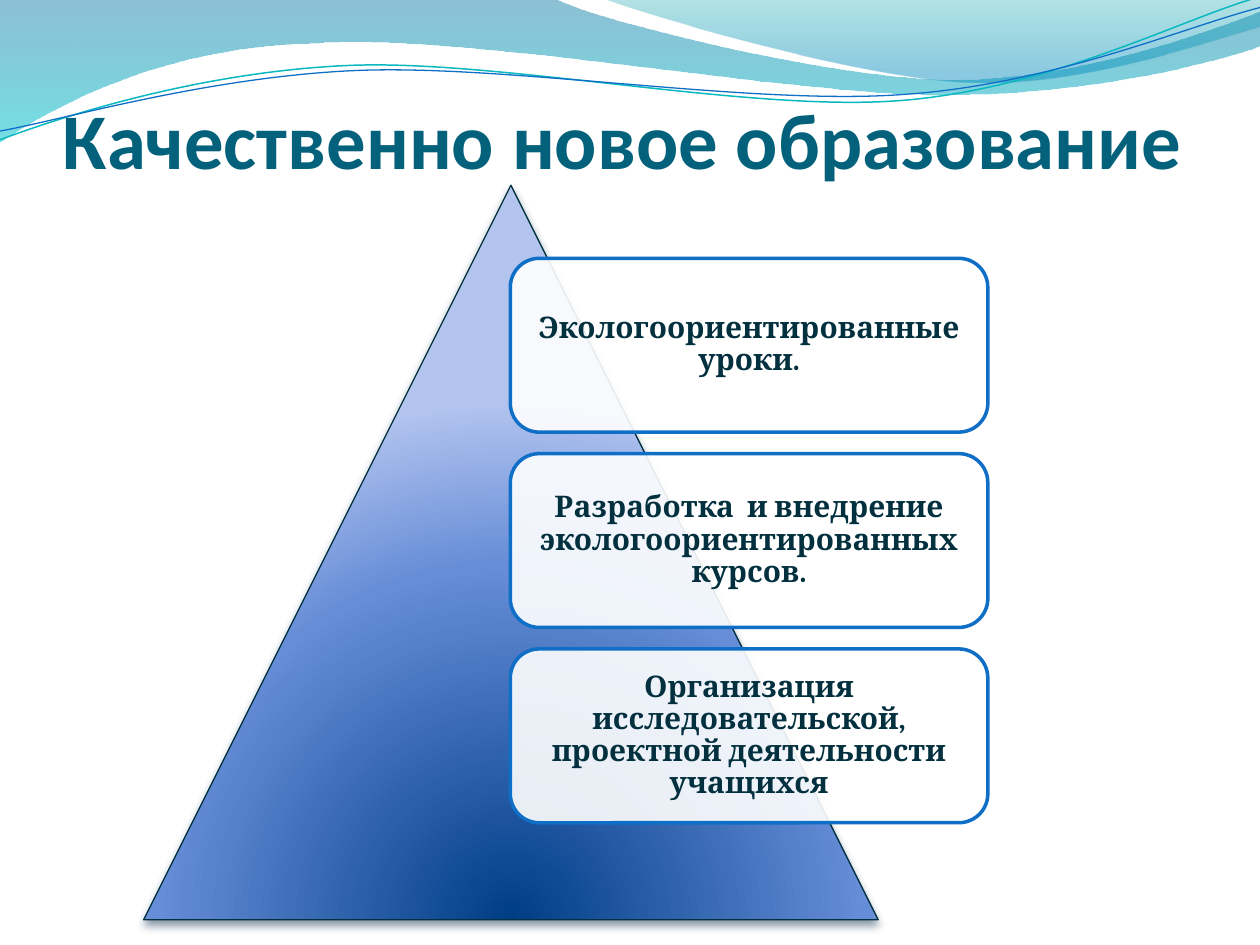
from lxml import etree
from pptx import Presentation
from pptx.dml.color import RGBColor
from pptx.enum import shapes, text
from pptx.oxml import parse_xml
from pptx.oxml.ns import nsdecls, qn
from pptx.util import Inches, Pt

COLORS = {
    "title": "04617B", "text": "02303E", "text_edge": "083763",
    "card": "FFFFFF", "card_edge": "0F6FC6", "shadow": "042747",
    "teal_line": "0AB8BF", "blue_line": "0F6FC6",
}
TITLE = "Качественно новое образование"
CARDS = [
    "Экологоориентированные уроки.",
    "Разработка  и внедрение экологоориентированных курсов.",
    "Организация исследовательской, проектной деятельности учащихся",
]
CARD_LEFT, CARD_TOP, CARD_W, CARD_H, CARD_GAP = 4.05, 2.05, 3.79, 1.38, 0.17
UNITS = 1000  # outline units per inch

DOWN = '<a:lin ang="5400000" scaled="1"/>'
FROM_BASE = ('<a:path path="circle"><a:fillToRect l="50000" t="130000" '
             'r="50000" b="-30000"/></a:path>')
# Gradient stops: position %, colour, opacity %
PYRAMID_STOPS = [(0, "003D87", 100), (68, "668DD7", 100), (100, "B3C4EF", 100)]

# Outlines start at a point; each step is a line (2 numbers) or a curve (6)
WAVES = [
    ([(0, "0074A1", 45), (100, "00C6CF", 55)],
     [(0, 0), (4.4, -0.01), (4.76, 0.17, 6.64, 0.63, 7.58, 0.63),
      (8.53, 0.63, 9.58, 0.26, 10, 0.09), (10.01, 0.36),
      (9.83, 0.44, 8.7, 0.76, 7.46, 0.75), (6.22, 0.75, 3.82, 0.28, 2.57, 0.34),
      (1.29, 0.36, 0.46, 0.83, -0.01, 1.13), (0, 0)]),
    ([(0, "00A1A9", 30), (80, "008BBF", 45)],
     [(4.79, -0.01), (5.09, 0.11, 6.82, 0.62, 7.69, 0.65),
      (8.56, 0.69, 9.61, 0.32, 10, 0.21), (10, 0), (4.79, -0.01)]),
]
WAVE_LINES = [
    ("teal_line", 0.85,
     [(0, 1.11), (0.48, 0.93, 1.58, 0.57, 2.77, 0.52),
      (3.95, 0.47, 5.93, 0.89, 7.13, 0.8), (8.33, 0.71, 9.38, 0.15, 9.98, -0.02)]),
    ("blue_line", 0.75,
     [(0, 1.04), (0.47, 0.96, 1.64, 0.61, 2.83, 0.56),
      (4.03, 0.51, 5.97, 0.84, 7.17, 0.75), (8.36, 0.67, 9.41, 0.21, 10, 0.06)]),
]


def rgb(name):
    return RGBColor.from_string(COLORS[name])


def add_outline(slide, outline, close):
    """Draw through all points, then join each curve's three points into a Bézier."""
    points = [(round(step[i] * UNITS), round(step[i + 1] * UNITS))
              for step in outline for i in range(0, len(step), 2)]
    builder = slide.shapes.build_freeform(*points[0], scale=Inches(1) / UNITS)
    builder.add_line_segments(points[1:], close=close)
    sp = builder.convert_to_shape()
    segments = iter(list(sp._element.iter(qn("a:lnTo"))))
    for step in outline[1:]:
        segment = next(segments)
        if len(step) == 6:
            curve = etree.Element(qn("a:cubicBezTo"))
            segment.addprevious(curve)
            for part in (segment, next(segments), next(segments)):
                curve.append(part[0])
                part.getparent().remove(part)
    sp.shadow.inherit = False
    sp.fill.background()
    return sp


def set_gradient(sp, stops, direction):
    sp.fill.background()
    stop_xml = "".join(
        f'<a:gs pos="{pos * 1000}"><a:srgbClr val="{color}">'
        f'<a:alpha val="{opacity * 1000}"/></a:srgbClr></a:gs>'
        for pos, color, opacity in stops)
    sp_pr = sp._element.spPr
    sp_pr.replace(sp_pr.find(qn("a:noFill")), parse_xml(
        f'<a:gradFill {nsdecls("a")} rotWithShape="1">'
        f'<a:gsLst>{stop_xml}</a:gsLst>{direction}</a:gradFill>'))


def set_line(sp, color, width):
    sp.line.color.rgb = rgb(color)
    sp.line.width = Pt(width)


def style_run(r, font, size, color):
    r.font.name, r.font.size, r.font.bold = font, Pt(size), True
    r.font.color.rgb = rgb(color)


def set_margins(tf, left, top, right, bottom):
    tf.margin_left, tf.margin_top = Inches(left), Inches(top)
    tf.margin_right, tf.margin_bottom = Inches(right), Inches(bottom)


def add_waves(slide):
    for stops, outline in WAVES:
        sp = add_outline(slide, outline, close=True)
        set_gradient(sp, stops, DOWN)
        sp.line.fill.background()
    for color, width, outline in WAVE_LINES:
        set_line(add_outline(slide, outline, close=False), color, width)


def add_title(slide):
    box = slide.shapes.add_textbox(Inches(0.5), Inches(0.77), Inches(9), Inches(0.7))
    tf = box.text_frame
    tf.word_wrap = True
    tf.vertical_anchor = text.MSO_ANCHOR.BOTTOM
    set_margins(tf, 0, 0.05, 0, 0)
    tf.text = TITLE
    style_run(tf.paragraphs[0].runs[0], "Calibri", 45, "title")


def add_pyramid(slide):
    sp = slide.shapes.add_shape(shapes.MSO_SHAPE.ISOSCELES_TRIANGLE, Inches(1.14),
                                Inches(1.47), Inches(5.83), Inches(5.83))
    set_gradient(sp, PYRAMID_STOPS, FROM_BASE)
    set_line(sp, "text", 0.75)
    sp.shadow.inherit = False
    sp._element.spPr.find(qn("a:effectLst")).append(parse_xml(
        f'<a:outerShdw {nsdecls("a")} blurRad="{Pt(4.5)}" dist="{Pt(3)}" '
        f'dir="5400000" rotWithShape="0"><a:srgbClr val="{COLORS["shadow"]}">'
        '<a:alpha val="48000"/></a:srgbClr></a:outerShdw>'))


def add_card(slide, top, label):
    sp = slide.shapes.add_shape(shapes.MSO_SHAPE.ROUNDED_RECTANGLE, Inches(CARD_LEFT),
                                Inches(top), Inches(CARD_W), Inches(CARD_H))
    sp.shadow.inherit = False
    sp.fill.solid()
    sp.fill.fore_color.rgb = rgb("card")
    color = sp._element.spPr.find(qn("a:solidFill"))[0]
    etree.SubElement(color, qn("a:alpha"), val="90000")
    set_line(sp, "card_edge", 2)

    tf = sp.text_frame
    tf.word_wrap = True
    tf.vertical_anchor = text.MSO_ANCHOR.MIDDLE
    set_margins(tf, 0.07, 0.07, 0.07, 0.07)
    tf.text = label
    p = tf.paragraphs[0]
    p.alignment = text.PP_ALIGN.CENTER
    p.line_spacing = 0.9
    r = p.runs[0]
    style_run(r, "Cambria", 17, "text")
    r.font._element.insert(0, parse_xml(
        f'<a:ln {nsdecls("a")} w="{Pt(0.75)}"><a:solidFill>'
        f'<a:srgbClr val="{COLORS["text_edge"]}"/></a:solidFill></a:ln>'))


def main():
    prs = Presentation()
    prs.slide_width, prs.slide_height = Inches(10), Inches(7.5)
    slide = prs.slides.add_slide(prs.slide_layouts[6])
    add_waves(slide)
    add_title(slide)
    add_pyramid(slide)
    for i, label in enumerate(CARDS):
        add_card(slide, CARD_TOP + i * (CARD_H + CARD_GAP), label)
    prs.save("out.pptx")


if __name__ == "__main__":
    main()
